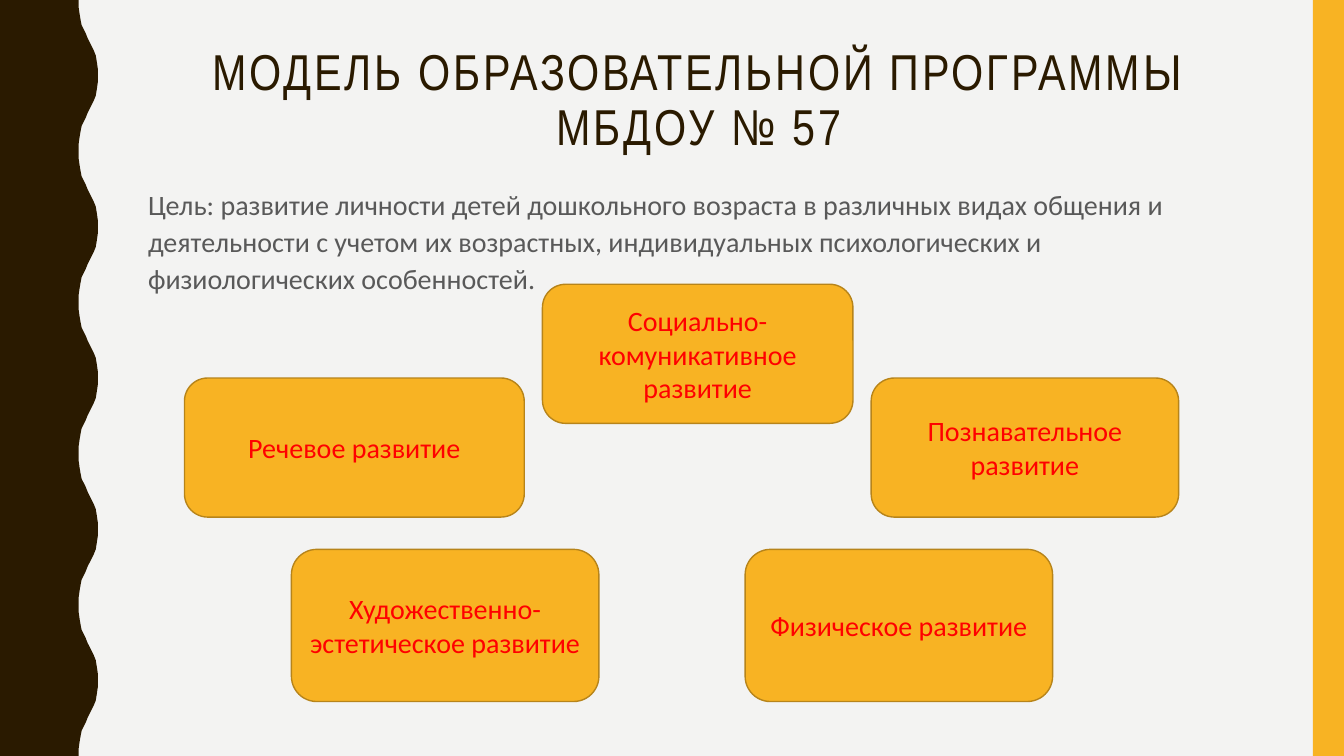
from pptx import Presentation
from pptx.dml.color import RGBColor
from pptx.enum.shapes import MSO_SHAPE
from pptx.enum.text import MSO_ANCHOR, PP_ALIGN
from pptx.util import Inches, Pt

COLORS = {
    "background": "F3F3F2",
    "dark": "2A1A00",
    "amber": "F8B323",
    "outline": "B7841A",
    "body": "595959",
    "label": "FF0000",
}
WAVE_PERIOD = 1.5
WAVE_COUNT = 5
WAVE_RISE = [
    (0.78, 0), (0.78, 0.07), (0.79, 0.14), (0.8, 0.2), (0.81, 0.25),
    (0.83, 0.29), (0.85, 0.33), (0.87, 0.38), (0.89, 0.42), (0.91, 0.46),
    (0.93, 0.5), (0.95, 0.55), (0.96, 0.61), (0.97, 0.68), (0.97, 0.75),
]
AREAS = [
    ("Речевое развитие", 1.83, 3.75, 3.37, 1.38),
    ("Социально-комуникативное развитие", 5.38, 2.82, 3.08, 1.38),
    ("Познавательное развитие", 8.64, 3.75, 3.05, 1.38),
    ("Художественно-эстетическое развитие", 2.89, 5.45, 3.05, 1.51),
    ("Физическое развитие", 7.39, 5.45, 3.05, 1.51),
]


def rgb(name):
    """Return the named colour."""
    return RGBColor.from_string(COLORS[name])


def paint(sp, line=None):
    """Give a shape its fill and outline according to its role."""
    sp.shadow.inherit = False
    sp.fill.solid()
    sp.fill.fore_color.rgb = rgb("amber")
    if line:
        sp.line.color.rgb = rgb(line)
        sp.line.width = Pt(1)
    else:
        sp.line.fill.background()


def add_run(p, text, size, font, color):
    """Add one formatted run to a paragraph."""
    r = p.add_run()
    r.text = text
    r.font.size = Pt(size)
    r.font.name = font
    r.font.color.rgb = rgb(color)
    return r


def add_wave(s):
    """Draw the dark band with a wavy right edge."""
    fall = [(x, WAVE_PERIOD - y) for x, y in reversed(WAVE_RISE[1:-1])]
    edge = [(x, y + i * WAVE_PERIOD)
            for i in range(WAVE_COUNT) for x, y in WAVE_RISE + fall]
    bottom = WAVE_COUNT * WAVE_PERIOD
    points = edge + [(WAVE_RISE[0][0], bottom), (0, bottom)]
    builder = s.shapes.build_freeform(0, 0, scale=1.0)
    builder.add_line_segments([(Inches(x), Inches(y)) for x, y in points])
    sp = builder.convert_to_shape()
    paint(sp)
    sp.fill.fore_color.rgb = rgb("dark")


def add_stripe(s):
    """Draw the amber stripe on the right edge."""
    sp = s.shapes.add_shape(MSO_SHAPE.RECTANGLE, Inches(13.02), 0,
                            Inches(0.31), Inches(7.5))
    paint(sp)


def add_text(s, top, height, spacing):
    """Add a wrapped text box and return its first paragraph."""
    sp = s.shapes.add_textbox(Inches(1.37), Inches(top),
                              Inches(11.13), Inches(height))
    tf = sp.text_frame
    tf.word_wrap = True
    p = tf.paragraphs[0]
    p.line_spacing = spacing
    return p


def add_title(s, text):
    """Add the centred, letter-spaced title."""
    p = add_text(s, 0.42, 1.63, 0.9)
    p.alignment = PP_ALIGN.CENTER
    r = add_run(p, text, 36, "Arial Narrow", "dark")
    r.font._element.set("spc", "200")


def add_goal(s, text):
    """Add the paragraph that states the goal."""
    p = add_text(s, 1.78, 3.93, 1.1)
    p.space_before = Pt(7)
    add_run(p, text, 20, "Calibri", "body")


def add_area(s, text, left, top, width, height):
    """Add a rounded box for one area of development."""
    sp = s.shapes.add_shape(MSO_SHAPE.ROUNDED_RECTANGLE, Inches(left),
                            Inches(top), Inches(width), Inches(height))
    paint(sp, "outline")
    tf = sp.text_frame
    tf.word_wrap = True
    tf.vertical_anchor = MSO_ANCHOR.MIDDLE
    p = tf.paragraphs[0]
    p.alignment = PP_ALIGN.CENTER
    add_run(p, text, 20, "Calibri", "label")


def main():
    """Build and save the slide."""
    prs = Presentation()
    prs.slide_width = Inches(13.33)
    prs.slide_height = Inches(7.5)
    s = prs.slides.add_slide(prs.slide_layouts[6])
    s.background.fill.solid()
    s.background.fill.fore_color.rgb = rgb("background")
    add_wave(s)
    add_stripe(s)
    add_title(s, "МОДЕЛЬ ОБРАЗОВАТЕЛЬНОЙ ПРОГРАММЫ МБДОУ № 57")
    add_goal(s, "Цель: развитие личности детей дошкольного возраста в "
                "различных видах общения и деятельности с учетом их "
                "возрастных, индивидуальных психологических и "
                "физиологических особенностей.")
    for area in AREAS:
        add_area(s, *area)
    prs.save("out.pptx")


if __name__ == "__main__":
    main()
